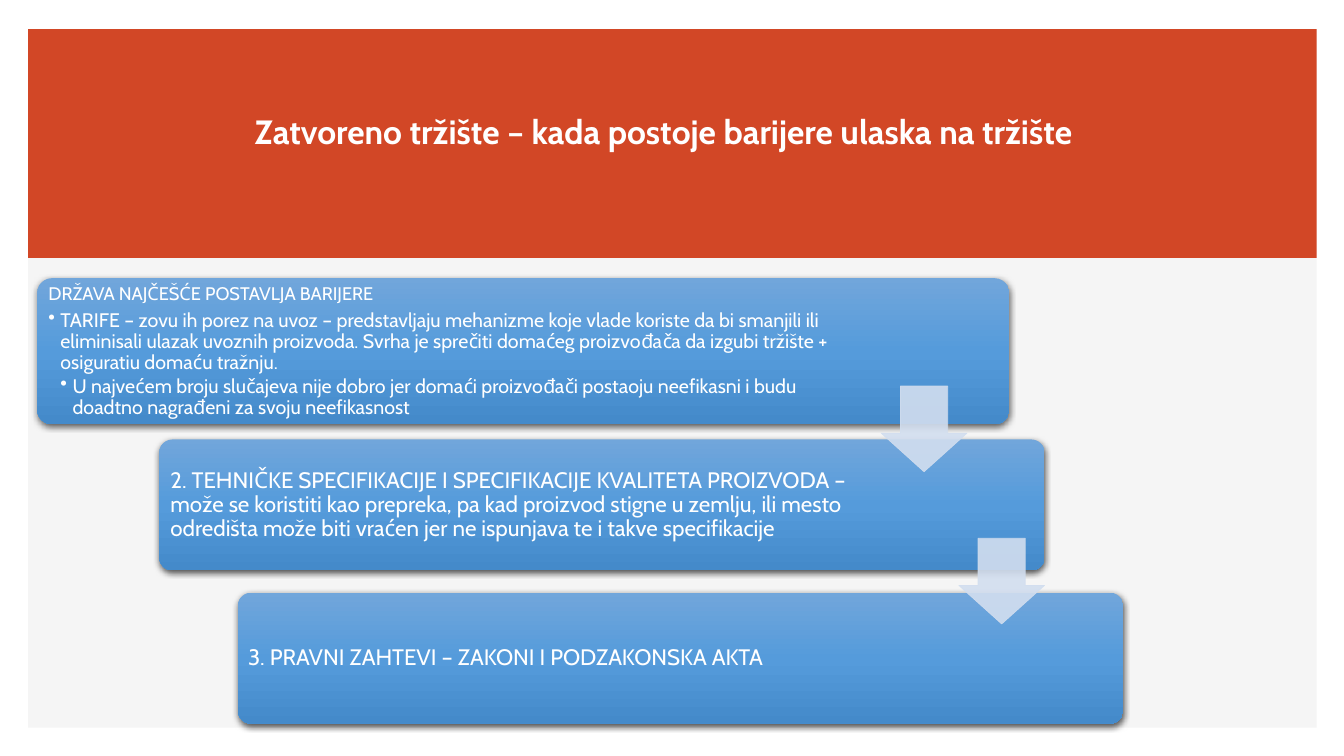
from pptx import Presentation
from pptx.dml.color import RGBColor
from pptx.enum.shapes import MSO_SHAPE
from pptx.enum.text import MSO_ANCHOR, PP_ALIGN
from pptx.oxml import parse_xml
from pptx.oxml.ns import nsdecls, qn
from pptx.util import Pt
from lxml.etree import SubElement

PX = 9144  # 100 px to the inch
FONT = "Cabin"
WHITE = "FFFFFF"
PALE_BLUE = "D2DEEF"


def color(hex_code):
    return RGBColor.from_string(hex_code)


def add_text(box, paragraphs, inset, anchor, bold=False):
    """Paragraphs are (text, size, bullet level, points after)."""
    left, top, width, height = [n * PX for n in box]
    frame = slide.shapes.add_textbox(left, top, width, height).text_frame
    frame.word_wrap = True
    frame.vertical_anchor = anchor
    frame.margin_left = frame.margin_right = inset * PX
    frame.margin_top = frame.margin_bottom = inset * PX
    frame.text = "\n".join(text for text, *_ in paragraphs)
    for paragraph, (_, size, level, after) in zip(frame.paragraphs, paragraphs):
        paragraph.line_spacing = 0.9
        paragraph.space_after = Pt(after)
        font = paragraph.runs[0].font
        font.name, font.size, font.bold = FONT, Pt(size), bold
        font.color.rgb = color(WHITE)
        if level:
            properties = paragraph._p.get_or_add_pPr()
            properties.set("marL", str(level * 12 * PX))
            properties.set("indent", str(-12 * PX))
            SubElement(properties, qn("a:buChar")).set("char", "•")
    return frame


presentation = Presentation()
presentation.slide_width = 1333 * PX
presentation.slide_height = 750 * PX
slide = presentation.slides.add_slide(presentation.slide_layouts[6])

# Grey page and red title band
for height, fill in [(693, "F5F5F5"), (227, "D24726")]:
    panel = slide.shapes.add_shape(MSO_SHAPE.RECTANGLE, 28 * PX, 29 * PX, 1278 * PX, height * PX)
    panel.shadow.inherit = False
    panel.fill.solid()
    panel.fill.fore_color.rgb = color(fill)
    panel.line.fill.background()

# Title
title = add_text(
    (54, 85, 1208, 70),
    [("Zatvoreno tržište – kada postoje barijere ulaska na tržište", 24, 0, 0)],
    5, MSO_ANCHOR.BOTTOM, bold=True)
title.paragraphs[0].alignment = PP_ALIGN.CENTER

# Barrier steps: card box, text box, inset, paragraphs
steps = [
    ((37, 276, 964, 145), (42, 281, 810, 136), 6, [
        ("DRŽAVA NAJČEŠĆE POSTAVLJA BARIJERE", 13, 0, 4.5),
        ("TARIFE – zovu ih porez na uvoz – predstavljaju mehanizme koje vlade koriste "
         "da bi smanjili ili eliminisali ulazak uvoznih proizvoda. Svrha je sprečiti "
         "domaćeg proizvođača da izgubi tržište + osiguratiu domaću tražnju.", 14, 1, 2),
        ("U najvećem broju slučajeva nije dobro jer domaći proizvođači postaoju "
         "neefikasni i budu doadtno nagrađeni za svoju neefikasnost", 14, 2, 2),
    ]),
    ((158, 436, 878, 130), (162, 440, 708, 123), 7, [
        ("2. TEHNIČKE SPECIFIKACIJE I SPECIFIKACIJE KVALITETA PROIZVODA – može se "
         "koristiti kao prepreka, pa kad proizvod stigne u zemlju, ili mesto odredišta "
         "može biti vraćen jer ne ispunjava te i takve specifikacije", 16, 0, 5.5),
    ]),
    ((236, 588, 878, 130), (239, 592, 708, 123), 7, [
        ("3. PRAVNI ZAHTEVI – ZAKONI I PODZAKONSKA AKTA", 16, 0, 5.5),
    ]),
]
card_gradient = [(0, "71A6DB"), (50, "559BDB"), (100, "448ACA")]

for card_box, text_box, inset, paragraphs in steps:
    card = slide.shapes.add_shape(MSO_SHAPE.ROUNDED_RECTANGLE, *[n * PX for n in card_box])
    card.adjustments[0] = 0.1
    card.line.fill.background()

    # Three-stop gradient running downwards
    card.fill.gradient()
    card.fill.gradient_angle = 270
    stops = card._element.spPr.find(qn("a:gradFill")).find(qn("a:gsLst"))
    for stop in list(stops):
        stops.remove(stop)
    for position, hex_code in card_gradient:
        stop = SubElement(stops, qn("a:gs"), pos=str(position * 1000))
        SubElement(stop, qn("a:srgbClr"), val=hex_code)

    # Soft shadow below the card
    card.shadow.inherit = False
    card._element.spPr.find(qn("a:effectLst")).append(parse_xml(
        f'<a:outerShdw {nsdecls("a")} blurRad="{Pt(4.5)}" dist="{Pt(1.5)}" dir="5400000" '
        'algn="ctr" rotWithShape="0"><a:srgbClr val="000000"><a:alpha val="63000"/>'
        '</a:srgbClr></a:outerShdw>'))

    add_text(text_box, paragraphs, inset, MSO_ANCHOR.MIDDLE)

# Arrows from step to step
for left, top in [(874, 383), (951, 534)]:
    arrow = slide.shapes.add_shape(MSO_SHAPE.DOWN_ARROW, left * PX, top * PX, 85 * PX, 85 * PX)
    arrow.adjustments[0] = 0.55
    arrow.adjustments[1] = 0.45
    arrow.shadow.inherit = False
    arrow.line.width = Pt(0.5)
    for paint in (arrow.fill, arrow.line.fill):
        paint.solid()
        paint.fore_color.rgb = color(PALE_BLUE)
    for tint in arrow._element.spPr.iter(qn("a:srgbClr")):
        SubElement(tint, qn("a:alpha"), val="90000")

presentation.save("out.pptx")
